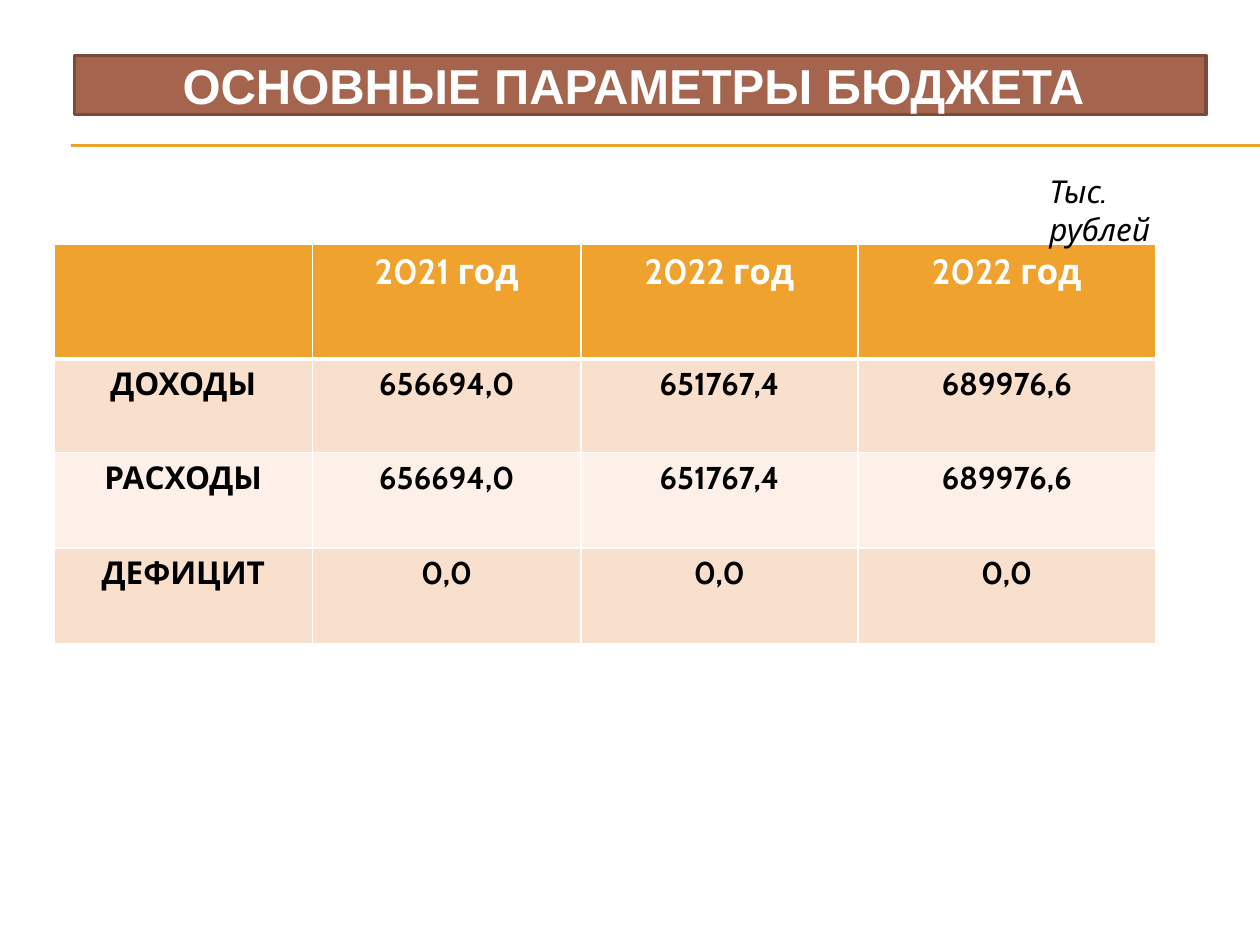
from lxml import etree
from pptx import Presentation
from pptx.dml.color import RGBColor
from pptx.enum.shapes import MSO_CONNECTOR, MSO_SHAPE
from pptx.enum.text import MSO_ANCHOR, PP_ALIGN
from pptx.oxml.ns import qn
from pptx.util import Inches, Pt

STRAIGHT = MSO_CONNECTOR.STRAIGHT
RECTANGLE = MSO_SHAPE.RECTANGLE
MIDDLE = MSO_ANCHOR.MIDDLE
LEFT = PP_ALIGN.LEFT
CENTER = PP_ALIGN.CENTER

WHITE = RGBColor(0xFF, 0xFF, 0xFF)
BLACK = RGBColor(0x00, 0x00, 0x00)
ORANGE = RGBColor(0xF0, 0xA2, 0x2E)
BROWN = RGBColor(0xA5, 0x64, 0x4E)
DARK_BROWN = RGBColor(0x7A, 0x4A, 0x3A)
PEACH = RGBColor(0xF9, 0xE0, 0xCD)
PALE_PEACH = RGBColor(0xFC, 0xF0, 0xE8)

COLUMN_WIDTHS = [2.05, 2.13, 2.2, 2.36]
ROW_HEIGHTS = [0.91, 0.74, 0.76, 0.76]
BUDGET = [
    ["", "2021 год", "2022 год", "2022 год"],
    ["ДОХОДЫ", "656694,0", "651767,4", "689976,6"],
    ["РАСХОДЫ", "656694,0", "651767,4", "689976,6"],
    ["ДЕФИЦИТ", "0,0", "0,0", "0,0"],
]


def write_text(frame, text, font_name, size, color, align, bold=False, italic=False):
    frame.text = text
    para = frame.paragraphs[0]
    para.alignment = align
    for span in para.runs:
        span.font.name = font_name
        span.font.size = Pt(size)
        span.font.color.rgb = color
        span.font.bold = bold
        span.font.italic = italic


def add_rules(page, left, right, tops):
    for top in tops:
        rule = page.shapes.add_connector(
            STRAIGHT, Inches(left), Inches(top), Inches(right), Inches(top))
        rule.line.color.rgb = ORANGE
        rule.line.width = Pt(0.75)
        etree.SubElement(rule._element.spPr, qn("a:effectLst"))


def add_title(page, left, top, width, height):
    box = page.shapes.add_shape(
        RECTANGLE, Inches(left), Inches(top), Inches(width), Inches(height))
    box.shadow.inherit = False
    box.fill.solid()
    box.fill.fore_color.rgb = BROWN
    box.line.color.rgb = DARK_BROWN
    box.line.width = Pt(2)
    frame = box.text_frame
    frame.margin_left = frame.margin_right = 0
    frame.margin_top = frame.margin_bottom = 0
    frame.vertical_anchor = MIDDLE
    frame.word_wrap = True
    write_text(frame, "ОСНОВНЫЕ ПАРАМЕТРЫ БЮДЖЕТА ", "Arial", 28, WHITE, CENTER, bold=True)


def add_unit_label(page, left, top, width, height):
    box = page.shapes.add_textbox(
        Inches(left), Inches(top), Inches(width), Inches(height))
    box.text_frame.word_wrap = True
    write_text(box.text_frame, "Тыс. рублей", "Cabin", 18, BLACK, LEFT, italic=True)


def set_border(cell, side, width):
    properties = cell._tc.get_or_add_tcPr()
    border = etree.SubElement(properties, qn(f"a:ln{side}"), w=str(Pt(width)))
    fill = etree.SubElement(border, qn("a:solidFill"))
    etree.SubElement(fill, qn("a:srgbClr"), val=str(WHITE))


def add_budget_table(page, left, top, width, height):
    table = page.shapes.add_table(
        len(ROW_HEIGHTS), len(COLUMN_WIDTHS),
        Inches(left), Inches(top), Inches(width), Inches(height)).table
    for column, column_width in zip(table.columns, COLUMN_WIDTHS):
        column.width = Inches(column_width)
    for row, row_height in zip(table.rows, ROW_HEIGHTS):
        row.height = Inches(row_height)
    for row_index, values in enumerate(BUDGET):
        is_header = row_index == 0
        band = PEACH if row_index % 2 else PALE_PEACH
        for column_index, value in enumerate(values):
            cell = table.cell(row_index, column_index)
            for side in "LRTB":
                touches_header = (row_index, side) in ((0, "B"), (1, "T"))
                set_border(cell, side, 3 if touches_header else 1)
            cell.fill.solid()
            cell.fill.fore_color.rgb = ORANGE if is_header else band
            write_text(cell.text_frame, value, "Cabin", 20 if is_header else 18,
                       WHITE if is_header else BLACK, CENTER, bold=True)


def main():
    deck = Presentation()
    deck.slide_width = Inches(10)
    deck.slide_height = Inches(7.5)
    page = deck.slides.add_slide(deck.slide_layouts[6])
    add_rules(page, 0.56, 10, [1.15, 1.16])
    add_budget_table(page, 0.43, 1.94, sum(COLUMN_WIDTHS), sum(ROW_HEIGHTS))
    add_unit_label(page, 8.23, 1.32, 1.49, 0.4)
    add_title(page, 0.59, 0.44, 8.98, 0.47)
    deck.save("out.pptx")


if __name__ == "__main__":
    main()
